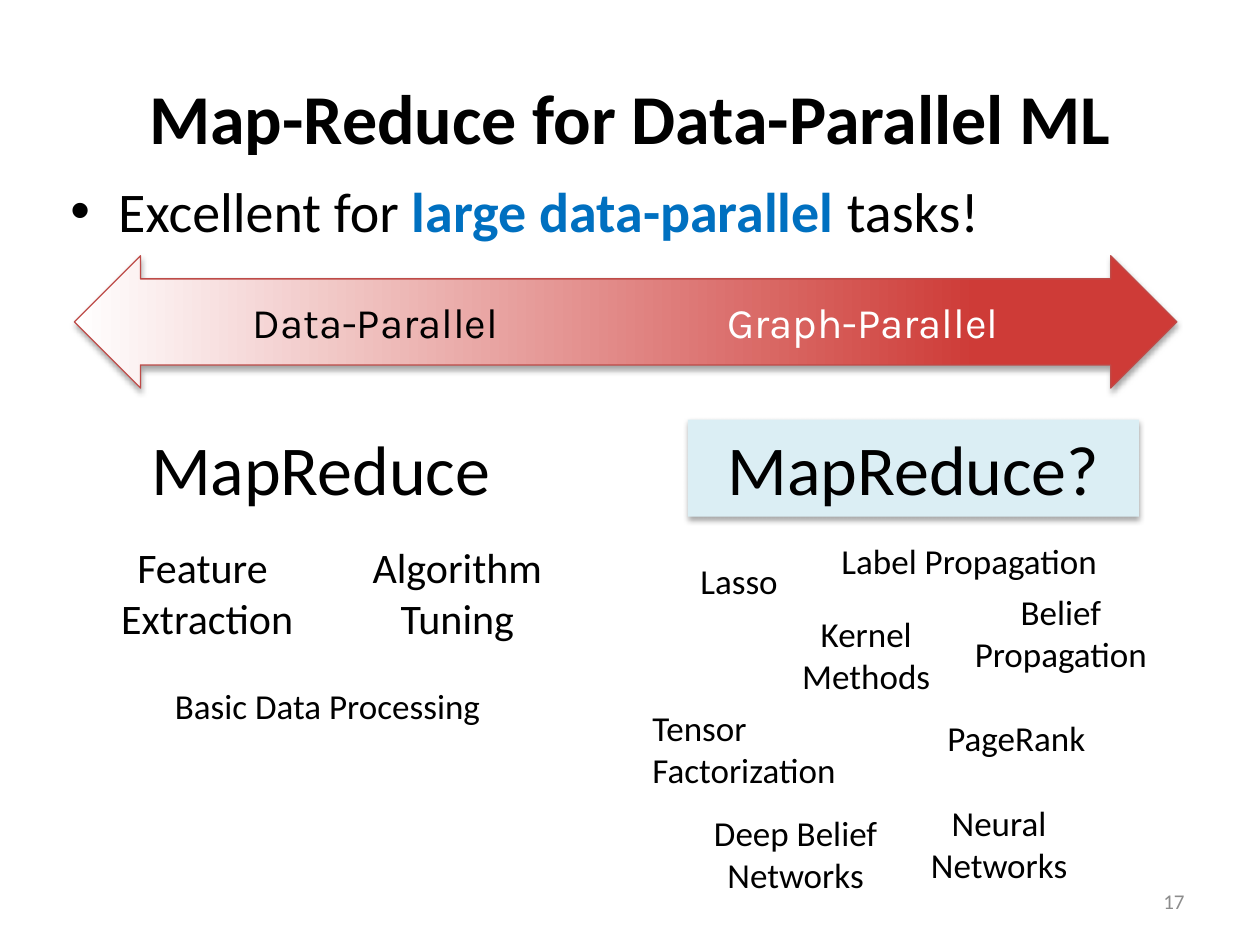
from lxml import etree
from pptx import Presentation
from pptx.dml.color import RGBColor
from pptx.enum import shapes, text
from pptx.oxml import ns
from pptx.util import Inches, Pt

BLACK, WHITE, BLUE, GRAY = "000000", "FFFFFF", "0070C0", "8C8C8C"
RED, DARK_RED, PALE_BLUE = "CE3B37", "BE4B48", "DBEEF4"
LEFT, CENTER, RIGHT = text.PP_ALIGN.LEFT, text.PP_ALIGN.CENTER, text.PP_ALIGN.RIGHT

TITLE = "Map-Reduce for Data-Parallel ML"
MESSAGE = [("Excellent for ", BLACK, False), ("large data-parallel ", BLUE, True), ("tasks!", BLACK, False)]
ARROW_LABELS = [("Data-Parallel", 2.98, BLACK), ("Graph-Parallel", 6.85, WHITE)]
ARROW_BOX = (0.59, 2.03, 8.75, 1.05)
QUESTION_BOX = (5.46, 3.33, 3.58, 0.77)
TOPICS = [
    (["Belief", "Propagation"], (7.58, 4.64, 1.68, 0.77), 20, CENTER),
    (["Label Propagation"], (6.58, 4.23, 2.26, 0.44), 20, LEFT),
    (["Kernel", "Methods"], (6.25, 4.81, 1.25, 0.77), 20, CENTER),
    (["Deep Belief", "Networks"], (5.5, 6.39, 1.63, 0.77), 20, CENTER),
    (["Neural", "Networks"], (7.25, 6.31, 1.36, 0.77), 20, CENTER),
    (["Tensor", "Factorization"], (5.08, 5.56, 1.76, 0.77), 20, LEFT),
    (["PageRank"], (7.42, 5.64, 1.31, 0.44), 20, LEFT),
    (["Lasso"], (5.42, 4.39, 0.89, 0.44), 20, CENTER),
    (["MapReduce"], (1.1, 3.33, 2.92, 0.77), 40, LEFT),
    (["Algorithm ", "Tuning"], (2.85, 4.25, 1.56, 0.91), 24, CENTER),
    (["Feature ", "Extraction"], (0.85, 4.25, 1.59, 0.91), 24, CENTER),
    (["Basic Data Processing"], (1.27, 5.38, 2.66, 0.44), 20, CENTER),
]


def color(value):
    return RGBColor.from_string(value)


def add_run(paragraph, words, size, value=BLACK, bold=False, font="Calibri"):
    run = paragraph.add_run()
    run.text = words
    run.font.size, run.font.bold, run.font.name = Pt(size), bold, font
    run.font.color.rgb = color(value)


def write(shape, lines, size, align=CENTER, wrap=True, anchor=text.MSO_ANCHOR.TOP, **style):
    frame = shape.text_frame
    frame.word_wrap, frame.vertical_anchor = wrap, anchor
    for index, line in enumerate(lines):
        paragraph = frame.add_paragraph() if index else frame.paragraphs[0]
        paragraph.alignment = align
        add_run(paragraph, line, size, **style)


def add_text(slide, box, lines, size, **options):
    shape = slide.shapes.add_textbox(*map(Inches, box))
    write(shape, lines, size, **options)


def add_shadow(shape):
    shape.shadow.inherit = False
    effects = shape._element.spPr.find(ns.qn("a:effectLst"))
    shadow = etree.SubElement(effects, ns.qn("a:outerShdw"), blurRad=str(Pt(3.1)),
                              dist=str(Pt(1.8)), dir="5400000", rotWithShape="0")
    shade = etree.SubElement(shadow, ns.qn("a:srgbClr"), val=BLACK)
    etree.SubElement(shade, ns.qn("a:alpha"), val="35000")


def add_message(slide):
    shape = slide.shapes.add_textbox(*map(Inches, (0.46, 1.35, 9.08, 0.83)))
    shape.text_frame.word_wrap = True
    paragraph = shape.text_frame.paragraphs[0]
    properties = paragraph._p.get_or_add_pPr()
    properties.set("marL", str(Inches(0.38)))
    properties.set("indent", str(Inches(-0.38)))
    etree.SubElement(properties, ns.qn("a:buFont"), typeface="Arial")
    etree.SubElement(properties, ns.qn("a:buChar"), char="•")
    for words, value, bold in MESSAGE:
        add_run(paragraph, words, 32, value, bold)


def add_arrow(slide):
    arrow = slide.shapes.add_shape(shapes.MSO_SHAPE.LEFT_RIGHT_ARROW, *map(Inches, ARROW_BOX))
    arrow.adjustments[0], arrow.adjustments[1] = 0.65, 0.5
    arrow.fill.gradient()
    arrow.fill.gradient_angle = 0
    for stop, position, value in zip(arrow.fill.gradient_stops, (0, 0.82), (WHITE, RED)):
        stop.position, stop.color.rgb = position, color(value)
    arrow.line.color.rgb, arrow.line.width = color(DARK_RED), Pt(0.75)
    add_shadow(arrow)
    for label, middle, value in ARROW_LABELS:
        add_text(slide, (middle - 1.3, ARROW_BOX[1], 2.6, ARROW_BOX[3]), [label], 24,
                 anchor=text.MSO_ANCHOR.MIDDLE, value=value, font="Karla")


def add_question(slide):
    panel = slide.shapes.add_shape(shapes.MSO_SHAPE.RECTANGLE, *map(Inches, QUESTION_BOX))
    panel.fill.solid()
    panel.fill.fore_color.rgb = color(PALE_BLUE)
    panel.line.fill.background()
    add_shadow(panel)
    write(panel, ["MapReduce?"], 40)


def main():
    """Build the slide on data-parallel and graph-parallel learning."""
    presentation = Presentation()
    presentation.slide_width, presentation.slide_height = Inches(10), Inches(7.5)
    slide = presentation.slides.add_slide(presentation.slide_layouts[5])
    title = slide.shapes.title
    title.left, title.top, title.width, title.height = map(Inches, (0.5, 0.3, 9, 1.25))
    write(title, [TITLE], 40, anchor=text.MSO_ANCHOR.MIDDLE, bold=True)
    add_message(slide)
    add_arrow(slide)
    add_question(slide)
    for lines, box, size, align in TOPICS:
        add_text(slide, box, lines, size, align=align, wrap=False)
    add_text(slide, (7.17, 6.95, 2.33, 0.4), ["17"], 12, align=RIGHT,
             anchor=text.MSO_ANCHOR.MIDDLE, value=GRAY)
    presentation.save("out.pptx")


if __name__ == "__main__":
    main()
